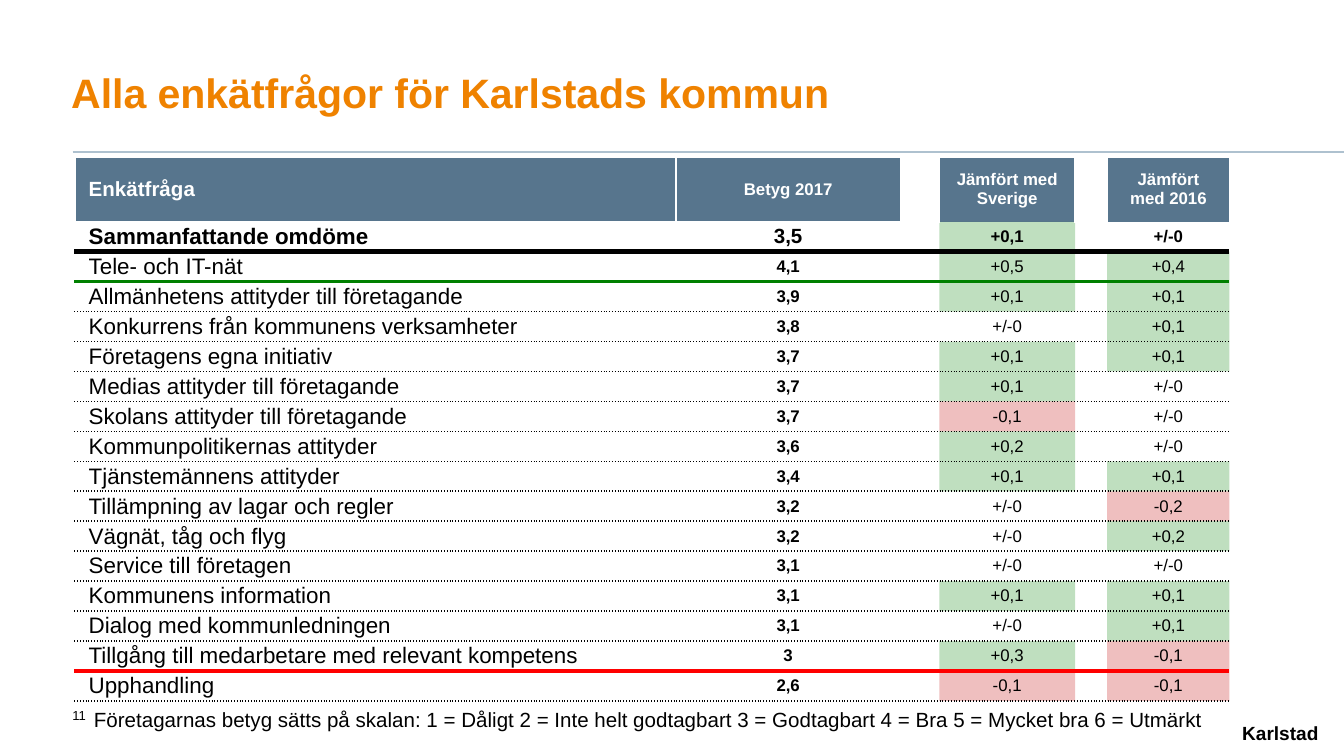
from dataclasses import dataclass
from typing import NamedTuple, Optional

from lxml.etree import SubElement
from pptx import Presentation
from pptx.dml.color import RGBColor
from pptx.enum.shapes import MSO_CONNECTOR
from pptx.enum.text import MSO_ANCHOR as Anchor, MSO_AUTO_SIZE as AutoSize, PP_ALIGN as Align
from pptx.oxml.ns import qn
from pptx.util import Inches, Pt

FONT = "Arial"
BLACK, WHITE, ORANGE = "000000", "FFFFFF", "EF8200"
HEADER_BLUE, RULE_BLUE = "57758D", "AEC1CF"
GREEN, RED, DARK_RED = "008000", "FF0000", "C00000"
NO_STYLE = "{2D5ABB26-0587-4C30-8999-92F81FD0307C}"

SLIDE_WIDTH = 10
SLIDE_HEIGHT = SLIDE_WIDTH * 9 / 16
COLUMN_WIDTHS = [4.47, 1.67, 0.29, 1.01, 0.23, 0.91]
HEADER_HEIGHT, TABLE_HEIGHT = 0.48, 4.05
QUESTION, GRADE, SWEDEN, LAST_YEAR = 0, 1, 3, 5
COMPARISONS = (SWEDEN, LAST_YEAR)


class Border(NamedTuple):
    color: str
    width: float
    dash: str = "solid"


THIN_WHITE = Border(WHITE, 1)
DOTTED = Border(BLACK, 1, "sysDot")


@dataclass
class Score:
    question: str
    grade: str
    sweden: str
    last_year: str
    rule: Border = DOTTED


HEADINGS = Score("Enkätfråga", "Betyg 2017", "Jämfört med Sverige", "Jämfört med 2016", THIN_WHITE)
SCORES = [
    Score("Sammanfattande omdöme", "3,5", "+0,1", "+/-0", Border(BLACK, 3)),
    Score("Tele- och IT-nät", "4,1", "+0,5", "+0,4", Border(GREEN, 2)),
    Score("Allmänhetens attityder till företagande", "3,9", "+0,1", "+0,1"),
    Score("Konkurrens från kommunens verksamheter", "3,8", "+/-0", "+0,1"),
    Score("Företagens egna initiativ", "3,7", "+0,1", "+0,1"),
    Score("Medias attityder till företagande", "3,7", "+0,1", "+/-0"),
    Score("Skolans attityder till företagande", "3,7", "-0,1", "+/-0"),
    Score("Kommunpolitikernas attityder", "3,6", "+0,2", "+/-0"),
    Score("Tjänstemännens attityder", "3,4", "+0,1", "+0,1"),
    Score("Tillämpning av lagar och regler", "3,2", "+/-0", "-0,2"),
    Score("Vägnät, tåg och flyg", "3,2", "+/-0", "+0,2"),
    Score("Service till företagen", "3,1", "+/-0", "+/-0"),
    Score("Kommunens information", "3,1", "+0,1", "+0,1"),
    Score("Dialog med kommunledningen", "3,1", "+/-0", "+0,1"),
    Score("Tillgång till medarbetare med relevant kompetens", "3", "+0,3", "-0,1", Border(RED, 2.25)),
    Score("Upphandling", "2,6", "-0,1", "-0,1"),
]


def rgb(color: str) -> RGBColor:
    return RGBColor.from_string(color)


def write(frame, text: str, size: float, color: str = BLACK, bold: bool = False,
          align=Align.LEFT) -> None:
    paragraph = frame.paragraphs[0]
    paragraph.alignment = align
    run = paragraph.add_run()
    run.text = text
    for name, value in {"name": FONT, "size": Pt(size), "bold": bold}.items():
        setattr(run.font, name, value)
    run.font.color.rgb = rgb(color)


def set_frame(frame, anchor, insets=(0, 0, 0, 0), wrap: bool = True) -> None:
    left, top, right, bottom = map(Inches, insets)
    values = {"margin_left": left, "margin_top": top, "margin_right": right,
              "margin_bottom": bottom, "vertical_anchor": anchor,
              "word_wrap": wrap, "auto_size": AutoSize.NONE}
    for name, value in values.items():
        setattr(frame, name, value)


def add_text(slide, box: tuple, text: str, size: float, anchor, insets=(0.1, 0.05, 0.1, 0.05),
             wrap: bool = True, **style) -> None:
    shape = slide.shapes.add_textbox(*map(Inches, box))
    set_frame(shape.text_frame, anchor, insets, wrap)
    write(shape.text_frame, text, size, **style)


def set_border(cell, side: str, border: Optional[Border]) -> None:
    if border is None:
        return
    line = SubElement(cell._tc.get_or_add_tcPr(), qn(f"a:ln{side}"), w=str(Pt(border.width)))
    fill = SubElement(line, qn("a:solidFill"))
    SubElement(fill, qn("a:srgbClr"), val=border.color)
    SubElement(line, qn("a:prstDash"), val=border.dash)


def set_fill(cell, color: Optional[str], percent: int = 100) -> None:
    if color is None:
        cell.fill.background()
        return
    cell.fill.solid()
    cell.fill.fore_color.rgb = rgb(color)
    if percent < 100:
        value = cell._tc.tcPr.find(f"{qn('a:solidFill')}/{qn('a:srgbClr')}")
        SubElement(value, qn("a:alpha"), val=str(percent * 1000))


def fill_cell(cell, text: str, row: int, column: int) -> None:
    header, summary = row == 0, row == 1
    if header:
        set_fill(cell, HEADER_BLUE if text else None)
    elif column in COMPARISONS:
        tint = {"+0": GREEN, "-0": DARK_RED}.get(text[:2])
        set_fill(cell, tint, 25)
    else:
        set_fill(cell, None)

    for name, value in {"margin_left": Inches(0.1), "margin_right": Inches(0.1), "margin_top": 0,
                        "margin_bottom": 0, "vertical_anchor": Anchor.MIDDLE}.items():
        setattr(cell, name, value)
    if not text:
        # A small end mark keeps an empty cell from stretching its row
        SubElement(cell.text_frame.paragraphs[0]._p, qn("a:endParaRPr"), sz="900")
        return
    if column == QUESTION:
        size = 11 if header else 12
    else:
        size = 11 if summary and column == GRADE else 9
    write(cell.text_frame, text, size, WHITE if header else BLACK,
          header or summary or column == GRADE,
          Align.LEFT if column == QUESTION else Align.CENTER)


def add_score_table(slide) -> None:
    rows = [HEADINGS, *SCORES]
    frame = slide.shapes.add_table(len(rows), len(COLUMN_WIDTHS), Inches(0.56), Inches(1.17),
                                   Inches(sum(COLUMN_WIDTHS)), Inches(TABLE_HEIGHT))
    table = frame.table
    table.first_row = table.horz_banding = False
    table._tbl.tblPr.find(qn("a:tableStyleId")).text = NO_STYLE
    for column, width in zip(table.columns, COLUMN_WIDTHS):
        column.width = Inches(width)
    body_height = (TABLE_HEIGHT - HEADER_HEIGHT) / len(SCORES)

    for r, score in enumerate(rows):
        table.rows[r].height = Inches(body_height if r else HEADER_HEIGHT)
        texts = [score.question, score.grade, "", score.sweden, "", score.last_year]
        for c, text in enumerate(texts):
            cell = table.cell(r, c)
            above = rows[r - 1].rule if r else THIN_WHITE
            below = score.rule
            # Comparison headings meet the first score without a gap
            if c in COMPARISONS:
                above = None if r == 1 else above
                below = None if r == 0 else below
            side = THIN_WHITE if r == 0 or c <= GRADE else None
            for edge, border in {"L": side, "R": side, "T": above, "B": below}.items():
                set_border(cell, edge, border)
            fill_cell(cell, text, r, c)


def add_rule(slide) -> None:
    rule = slide.shapes.add_connector(MSO_CONNECTOR.STRAIGHT, Inches(0.54), Inches(1.13),
                                      Inches(SLIDE_WIDTH), Inches(1.13))
    rule.line.color.rgb = rgb(RULE_BLUE)
    rule.line.width = Pt(1)
    SubElement(rule._element.spPr, qn("a:effectLst"))


def main() -> None:
    presentation = Presentation()
    presentation.slide_width = Inches(SLIDE_WIDTH)
    presentation.slide_height = Inches(SLIDE_HEIGHT)
    slide = presentation.slides.add_slide(presentation.slide_layouts[5])

    # Title and the rule below it
    title = slide.shapes.title
    title.left, title.top, title.width, title.height = map(Inches, (0.53, 0.15, 7.47, 0.76))
    set_frame(title.text_frame, Anchor.BOTTOM, (0, 0, 0, 0.04))
    write(title.text_frame, "Alla enkätfrågor för Karlstads kommun", 22, ORANGE, True)
    add_rule(slide)

    # Footer: municipality, page number and grading scale
    add_text(slide, (5.18, 5.24, 4.63, 0.3), "Karlstad", 10.2, Anchor.BOTTOM, (0, 0, 0, 0),
             bold=True, align=Align.RIGHT)
    add_text(slide, (0.44, 5.26, 0.34, 0.13), "11", 7, Anchor.MIDDLE)
    add_text(slide, (0.6, 5.21, 8.48, 0.29),
             "Företagarnas betyg sätts på skalan: 1 = Dåligt 2 = Inte helt godtagbart "
             "3 = Godtagbart 4 = Bra 5 = Mycket bra 6 = Utmärkt", 11, Anchor.TOP, wrap=False)

    # Survey scores
    add_score_table(slide)
    presentation.save("out.pptx")


if __name__ == "__main__":
    main()
